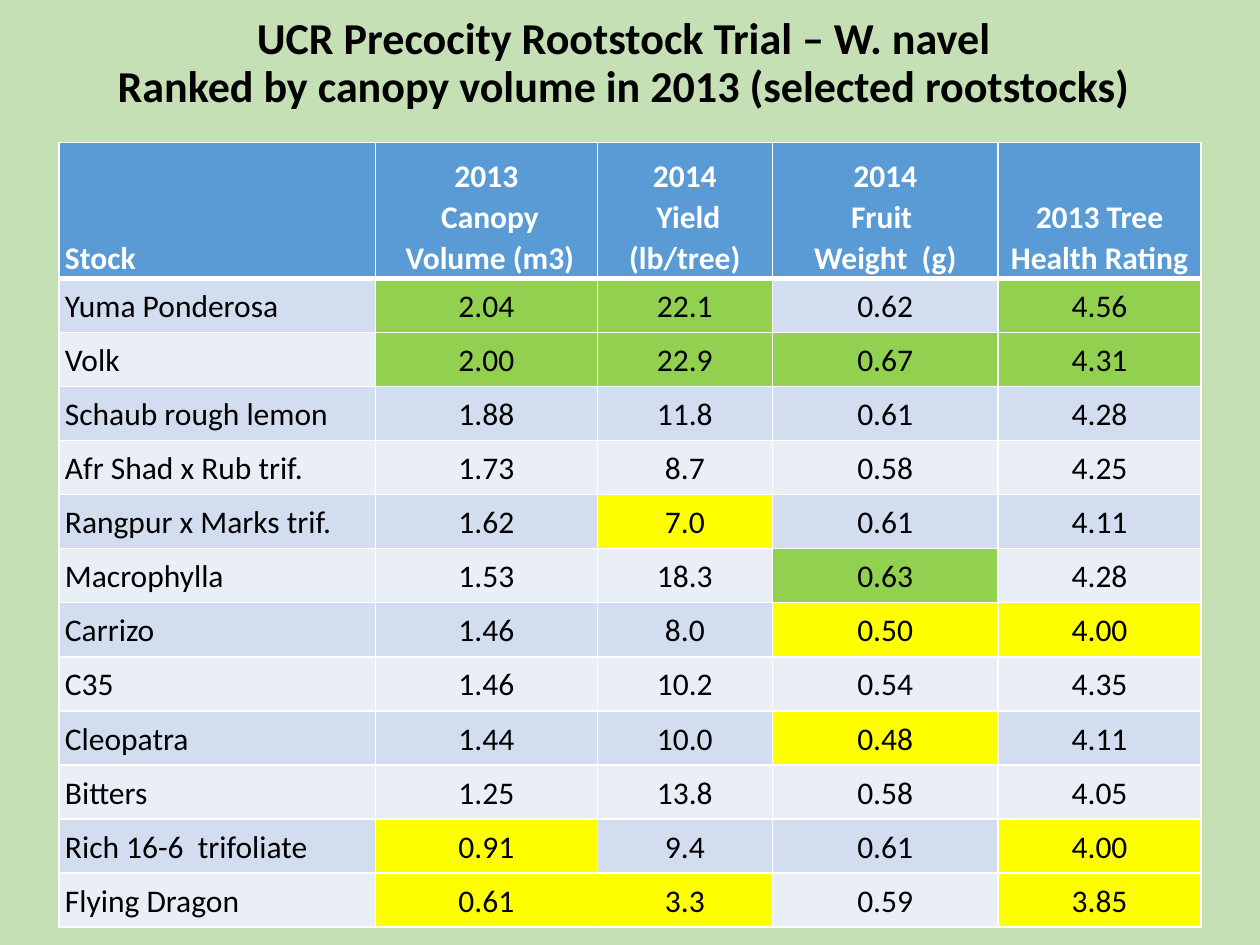
from lxml import etree
from pptx import Presentation
from pptx.dml.color import RGBColor
from pptx.enum.text import MSO_ANCHOR, PP_ALIGN
from pptx.oxml.ns import qn
from pptx.util import Cm, Pt

LEFT, CENTER = PP_ALIGN.LEFT, PP_ALIGN.CENTER
MIDDLE, BOTTOM = MSO_ANCHOR.MIDDLE, MSO_ANCHOR.BOTTOM

COLORS = {
    "background": "C5E0B4",
    "header": "5B9BD5",
    "odd_row": "D2DEEF",
    "even_row": "EAEFF7",
    "high": "92D050",
    "low": "FFFF00",
    "black": "000000",
    "white": "FFFFFF",
}
MARKS = {"H": "high", "L": "low"}

TITLE = "UCR Precocity Rootstock Trial – W. navel\vRanked by canopy volume in 2013 (selected rootstocks)"
HEADERS = [
    "Stock",
    "2013\v Canopy\v Volume (m3)",
    "2014\v Yield (lb/tree)",
    "2014\nFruit \vWeight  (g)",
    "2013 Tree Health Rating",
]
ROOTSTOCKS = [
    ("Yuma Ponderosa", "2.04", "22.1", "0.62", "4.56", "HH-H"),
    ("Volk", "2.00", "22.9", "0.67", "4.31", "HHHH"),
    ("Schaub rough lemon", "1.88", "11.8", "0.61", "4.28", "----"),
    ("Afr Shad x Rub trif.", "1.73", "8.7", "0.58", "4.25", "----"),
    ("Rangpur x Marks trif.", "1.62", "7.0", "0.61", "4.11", "-L--"),
    ("Macrophylla", "1.53", "18.3", "0.63", "4.28", "--H-"),
    ("Carrizo", "1.46", "8.0", "0.50", "4.00", "--LL"),
    ("C35", "1.46", "10.2", "0.54", "4.35", "----"),
    ("Cleopatra", "1.44", "10.0", "0.48", "4.11", "--L-"),
    ("Bitters", "1.25", "13.8", "0.58", "4.05", "----"),
    ("Rich 16-6  trifoliate", "0.91", "9.4", "0.61", "4.00", "L--L"),
    ("Flying Dragon", "0.61", "3.3", "0.59", "3.85", "LL-L"),
]
COLUMN_WIDTHS = [6.38, 4.47, 3.53, 4.55, 4.09]
HEADER_HEIGHT, ROW_HEIGHT = 2.74, 1.07


def color(name):
    """Return the named colour."""
    return RGBColor.from_string(COLORS[name])


def write_text(text_frame, text, size=18, ink="black", bold=False, align=CENTER, spacing=1.07):
    """Write text with one paragraph per line and the given format."""
    for index, line in enumerate(text.split("\n")):
        paragraph = text_frame.add_paragraph() if index else text_frame.paragraphs[0]
        paragraph.text = line
        paragraph.alignment = align
        paragraph.line_spacing = spacing
        paragraph.space_before = paragraph.space_after = Pt(0)
        for run in paragraph.runs:
            run.font.name = "Calibri"
            run.font.size = Pt(size)
            run.font.bold = bold
            run.font.color.rgb = color(ink)


def add_borders(cell, top=1, bottom=1):
    """Draw white borders around a cell, with widths in points."""
    properties = cell._tc.get_or_add_tcPr()
    for side, width in (("lnL", 1), ("lnR", 1), ("lnT", top), ("lnB", bottom)):
        line = etree.SubElement(properties, qn("a:" + side), w=str(Pt(width)))
        fill = etree.SubElement(line, qn("a:solidFill"))
        etree.SubElement(fill, qn("a:srgbClr"), val=COLORS["white"])


def format_cell(cell, text, fill, anchor=MIDDLE, padding=0.13, top=1, bottom=1, **text_format):
    """Fill one cell with its text, margins, borders and background."""
    write_text(cell.text_frame, text, **text_format)
    cell.vertical_anchor = anchor
    cell.margin_left = cell.margin_right = Cm(0.12)
    cell.margin_top = cell.margin_bottom = Cm(padding)
    add_borders(cell, top, bottom)
    cell.fill.solid()
    cell.fill.fore_color.rgb = color(fill)


def place_title(slide, left, top, width, height):
    """Place the slide title in the given box."""
    title = slide.shapes.title
    title.left, title.top, title.width, title.height = Cm(left), Cm(top), Cm(width), Cm(height)
    title.text_frame.vertical_anchor = MIDDLE
    write_text(title.text_frame, TITLE, size=25.2, bold=True, spacing=0.9)


def place_table(slide, left, top):
    """Place the rootstock table with its top left corner at the given point."""
    height = HEADER_HEIGHT + ROW_HEIGHT * len(ROOTSTOCKS)
    table = slide.shapes.add_table(
        len(ROOTSTOCKS) + 1, len(HEADERS), Cm(left), Cm(top), Cm(sum(COLUMN_WIDTHS)), Cm(height)
    ).table
    for column, width in zip(table.columns, COLUMN_WIDTHS):
        column.width = Cm(width)
    for index, row in enumerate(table.rows):
        row.height = Cm(ROW_HEIGHT if index else HEADER_HEIGHT)

    for column, text in enumerate(HEADERS):
        format_cell(table.cell(0, column), text, "header", anchor=BOTTOM, padding=0, bottom=3,
                    ink="white", bold=True, align=CENTER if column else LEFT)
    for row, (*texts, marks) in enumerate(ROOTSTOCKS, start=1):
        band = "odd_row" if row % 2 else "even_row"
        for column, (text, mark) in enumerate(zip(texts, "-" + marks)):
            format_cell(table.cell(row, column), text, MARKS.get(mark, band),
                        top=3 if row == 1 else 1, align=CENTER if column else LEFT)


def main():
    """Build and save the presentation."""
    presentation = Presentation()
    presentation.slide_width, presentation.slide_height = Cm(25.4), Cm(19.05)
    slide = presentation.slides.add_slide(presentation.slide_layouts[5])
    slide.background.fill.solid()
    slide.background.fill.fore_color.rgb = color("background")
    place_title(slide, 1.63, 0.25, 21.89, 2.08)
    place_table(slide, 1.19, 2.87)
    presentation.save("out.pptx")


if __name__ == "__main__":
    main()
